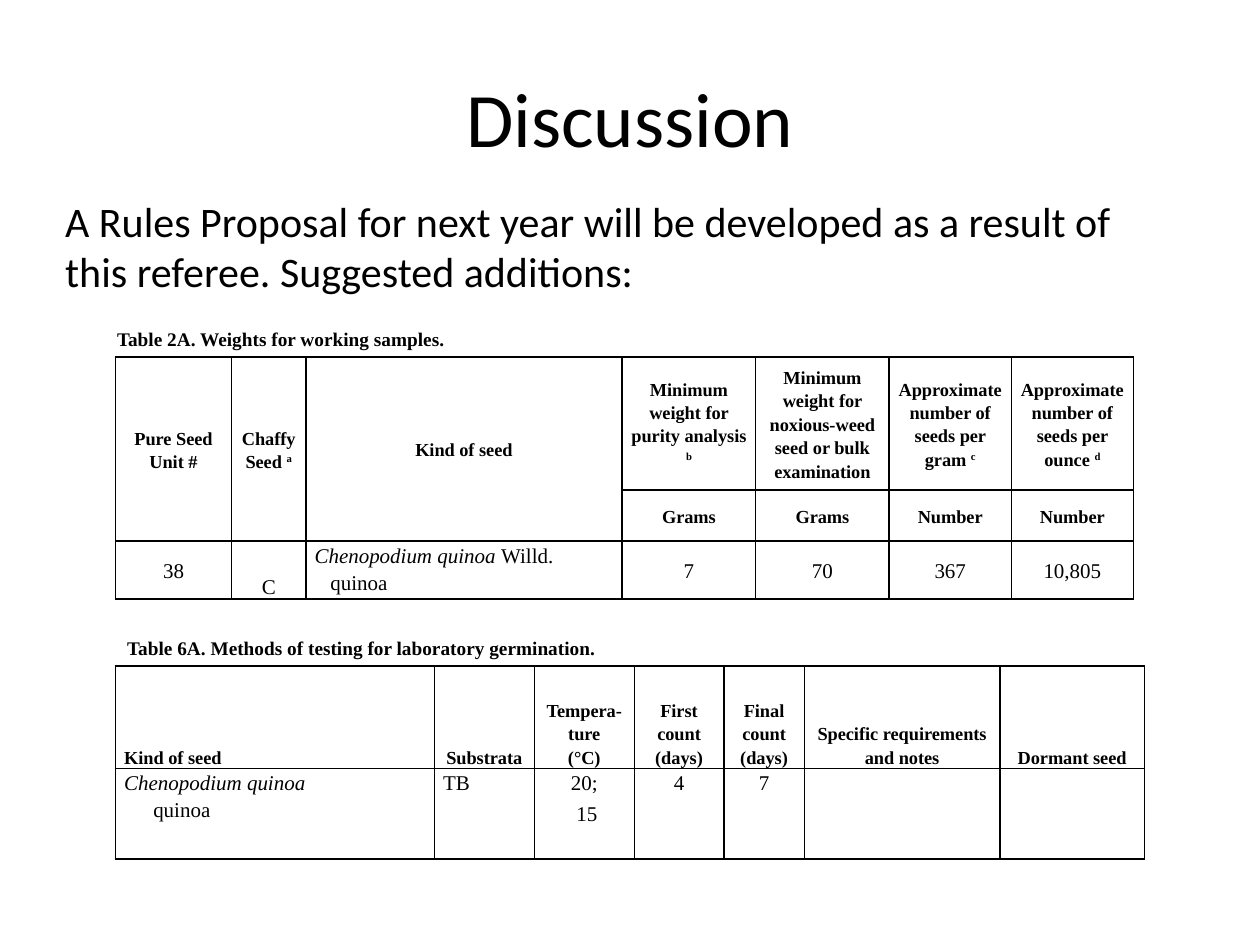
"""Build the discussion slide with its two tables of proposed seed-testing rules."""
from dataclasses import dataclass

from lxml import etree
from pptx import Presentation
from pptx.dml.color import RGBColor
from pptx.enum.text import MSO_ANCHOR, PP_ALIGN
from pptx.oxml.ns import qn
from pptx.util import Pt

LEFT, CENTER = PP_ALIGN.LEFT, PP_ALIGN.CENTER
TOP, MIDDLE, BOTTOM = MSO_ANCHOR.TOP, MSO_ANCHOR.MIDDLE, MSO_ANCHOR.BOTTOM
SANS, SERIF = "Calibri", "Times New Roman"
INK = "000000"
BORDER_TAGS = ("a:lnL", "a:lnR", "a:lnT", "a:lnB")


@dataclass(frozen=True)
class Span:
    """A piece of a line with its own slant or raised position."""
    text: str
    italic: bool = False
    raised: bool = False


@dataclass(frozen=True)
class Line:
    """One paragraph made of spans."""
    spans: tuple[Span, ...]
    indent: float = 0


@dataclass(frozen=True)
class Entry:
    """The content and layout of one table cell."""
    lines: tuple[Line, ...]
    size: float = 12
    bold: bool = False
    align: PP_ALIGN = CENTER
    anchor: MSO_ANCHOR = MIDDLE
    gap: float = 0


@dataclass(frozen=True)
class Grid:
    """A table with its place, track sizes, rows and merged column heads."""
    left: float
    top: float
    widths: tuple[float, ...]
    heights: tuple[float, ...]
    rows: tuple[tuple[Entry | None, ...], ...]
    tall_heads: int = 0


def color(hex_value: str) -> RGBColor:
    """Turn a hex string into a colour."""
    return RGBColor.from_string(hex_value)


def plain(*texts: str) -> tuple[Line, ...]:
    """Make one unformatted line from each text."""
    return tuple(Line((Span(text),)) for text in texts)


def heading(*texts: str, note: str = "", align: PP_ALIGN = CENTER,
            anchor: MSO_ANCHOR = MIDDLE) -> Entry:
    """Make a bold column heading, with an optional raised note letter."""
    lines = plain(*texts)
    if note:
        lines = (Line((Span(texts[0] + " "), Span(note, raised=True))),)
    return Entry(lines, 10.5, True, align, anchor)


def value(*texts: str, anchor: MSO_ANCHOR = MIDDLE, align: PP_ALIGN = CENTER,
          gap: float = 0) -> Entry:
    """Make a regular data entry."""
    return Entry(plain(*texts), anchor=anchor, align=align, gap=gap)


def write(frame, lines: tuple[Line, ...], *, font: str = SERIF, size: float = 11,
          bold: bool = False, align: PP_ALIGN = LEFT, anchor: MSO_ANCHOR = TOP,
          spacing: float = 1.0, gap: float = 0) -> None:
    """Fill a text frame with formatted lines."""
    frame.word_wrap = True
    frame.vertical_anchor = anchor
    for index, line in enumerate(lines):
        paragraph = frame.add_paragraph() if index else frame.paragraphs[0]
        paragraph.alignment = align
        paragraph.line_spacing = spacing
        paragraph.space_before = paragraph.space_after = Pt(gap)
        if line.indent:
            paragraph._p.get_or_add_pPr().set("marL", str(Pt(line.indent)))
        for span in line.spans:
            run = paragraph.add_run()
            run.text = span.text
            run.font.name, run.font.size = font, Pt(size)
            run.font.bold, run.font.italic = bold, span.italic
            run.font.color.rgb = color(INK)
            if span.raised:
                run._r.get_or_add_rPr().set("baseline", "30000")


def add_label(slide, box: tuple[float, float, float, float], text: str, **style) -> None:
    """Add a text box holding one line of text."""
    label = slide.shapes.add_textbox(*map(Pt, box))
    write(label.text_frame, plain(text), **style)


def outline(cell) -> None:
    """Give a cell a clear fill and a thin border on all sides."""
    cell.fill.background()
    properties = cell._tc.get_or_add_tcPr()
    for index, tag in enumerate(BORDER_TAGS):
        border = etree.Element(qn(tag), w=str(Pt(1)))
        fill = etree.SubElement(border, qn("a:solidFill"))
        etree.SubElement(fill, qn("a:srgbClr"), val=INK)
        properties.insert(index, border)


def add_grid(slide, grid: Grid) -> None:
    """Draw a bordered table."""
    table = slide.shapes.add_table(
        len(grid.heights), len(grid.widths), Pt(grid.left), Pt(grid.top),
        Pt(sum(grid.widths)), Pt(sum(grid.heights))).table
    table.first_row = table.horz_banding = False
    for column, width in zip(table.columns, grid.widths):
        column.width = Pt(width)
    for row, height in zip(table.rows, grid.heights):
        row.height = Pt(height)
    for row, entries in zip(table.rows, grid.rows):
        for cell, entry in zip(row.cells, entries):
            outline(cell)
            cell.margin_left = cell.margin_right = Pt(5)
            cell.margin_top = cell.margin_bottom = Pt(0)
            if entry:
                write(cell.text_frame, entry.lines, size=entry.size, bold=entry.bold,
                      align=entry.align, spacing=1.15, gap=entry.gap)
                cell.vertical_anchor = entry.anchor
    for column in range(grid.tall_heads):
        table.cell(0, column).merge(table.cell(1, column))


WEIGHTS = Grid(
    66, 204, (66.4, 42.4, 180.8, 76.3, 76.3, 69.8, 69.8), (76, 29.2, 33),
    (
        (heading("Pure Seed Unit #"), heading("Chaffy Seed", note="a"),
         heading("Kind of seed"),
         heading("Minimum weight for purity analysis", note="b"),
         heading("Minimum weight for noxious-weed seed or bulk examination"),
         heading("Approximate number of seeds per gram", note="c"),
         heading("Approximate number of seeds per ounce", note="d")),
        (None, None, None, heading("Grams"), heading("Grams"),
         heading("Number"), heading("Number")),
        (value("38"), value("C", anchor=BOTTOM),
         Entry((Line((Span("Chenopodium quinoa ", italic=True), Span("Willd."))),
                Line((Span("quinoa"),), indent=9)), align=LEFT, anchor=TOP),
         value("7"), value("70"), value("367"), value("10,805")),
    ), tall_heads=3)

GERMINATION = Grid(
    66, 380.6, (182.2, 57.2, 57.1, 51.2, 46, 111.8, 82.6), (58.4, 51.8),
    (
        (heading("Kind of seed", align=LEFT, anchor=BOTTOM),
         heading("Substrata", anchor=BOTTOM),
         heading("Tempera-ture", "(°C)", anchor=BOTTOM),
         heading("First count (days)", anchor=BOTTOM),
         heading("Final count (days)", anchor=BOTTOM),
         heading("Specific requirements", "and notes", anchor=BOTTOM),
         heading("Dormant seed", anchor=BOTTOM)),
        (Entry((Line((Span("Chenopodium quinoa", italic=True),)),
                Line((Span("quinoa"),), indent=16.6)), align=LEFT, anchor=TOP),
         value("TB", anchor=TOP, align=LEFT, gap=1.3),
         Entry((Line((Span("20;"),)), Line((Span("15"),), indent=3)),
               anchor=TOP, gap=1.3),
         value("4", anchor=TOP, gap=1.3), value("7", anchor=TOP, gap=1.3), None, None),
    ))


def main() -> None:
    """Build and save the slide."""
    deck = Presentation()
    deck.slide_width, deck.slide_height = Pt(720), Pt(540)
    slide = deck.slides.add_slide(deck.slide_layouts[6])
    add_label(slide, (36, 21.6, 648, 90), "Discussion",
              font=SANS, size=44, align=CENTER, anchor=MIDDLE)
    add_label(slide, (30.2, 108, 648, 72),
              "A Rules Proposal for next year will be developed as a result of "
              "this referee. Suggested additions:", font=SANS, size=24)
    add_label(slide, (59.8, 183.2, 288, 20),
              "Table 2A. Weights for working samples.", bold=True)
    add_grid(slide, WEIGHTS)
    add_grid(slide, GERMINATION)
    add_label(slide, (65.6, 360, 288, 20),
              "Table 6A. Methods of testing for laboratory germination.", bold=True)
    deck.save("out.pptx")


if __name__ == "__main__":
    main()
